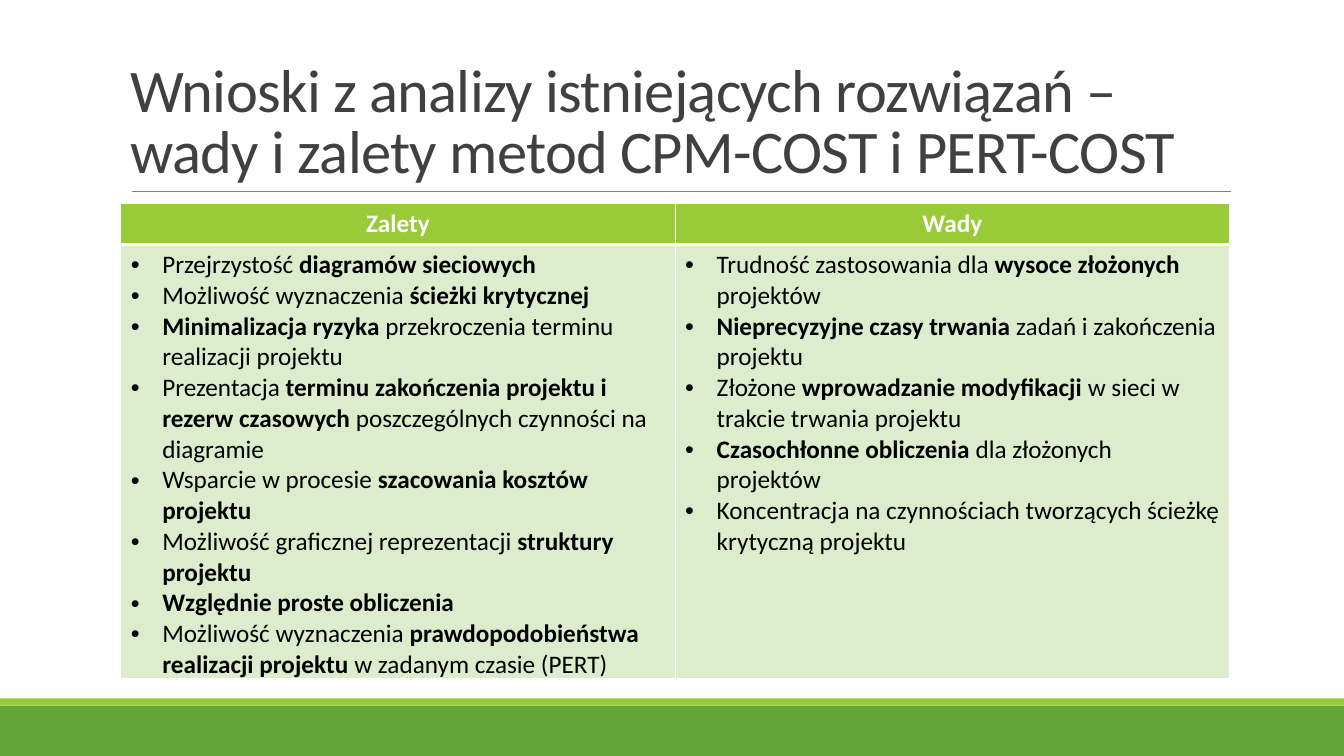
"""Build the slide on the pros and cons of the CPM-COST and PERT-COST methods."""
from lxml.etree import SubElement
from pptx import Presentation
from pptx.dml.color import RGBColor
from pptx.enum.shapes import MSO_CONNECTOR, MSO_SHAPE
from pptx.enum.text import MSO_ANCHOR, PP_ALIGN
from pptx.oxml.ns import qn
from pptx.util import Pt

PX = 9525
WHITE = RGBColor(0xFF, 0xFF, 0xFF)
BLACK = RGBColor(0, 0, 0)
TITLE_GREY = RGBColor(0x40, 0x40, 0x40)
RULE_GREY = RGBColor(0x80, 0x80, 0x80)
GREEN = RGBColor(0x63, 0xA5, 0x37)
LIME = RGBColor(0x99, 0xCB, 0x38)
PALE_GREEN = RGBColor(0xDE, 0xEC, 0xCE)

COLUMNS = {
    "Zalety": [
        "Przejrzystość *diagramów sieciowych*",
        "Możliwość wyznaczenia *ścieżki krytycznej*",
        "*Minimalizacja ryzyka *przekroczenia terminu realizacji projektu",
        "Prezentacja *terminu zakończenia projektu i rezerw czasowych*"
        " poszczególnych czynności na diagramie",
        "Wsparcie w procesie *szacowania kosztów projektu*",
        "Możliwość graficznej reprezentacji *struktury projektu*",
        "*Względnie proste obliczenia*",
        "Możliwość wyznaczenia *prawdopodobieństwa realizacji projektu*"
        " w zadanym czasie (PERT)",
    ],
    "Wady": [
        "Trudność zastosowania dla *wysoce złożonych *projektów",
        "*Nieprecyzyjne czasy trwania *zadań i zakończenia projektu",
        "Złożone *wprowadzanie modyfikacji *w sieci w trakcie trwania projektu",
        "*Czasochłonne obliczenia *dla złożonych projektów",
        "Koncentracja na czynnościach tworzących ścieżkę krytyczną projektu",
    ],
}


def style_run(run, size, color, bold=False):
    run.font.name = "Calibri"
    run.font.size = Pt(size)
    run.font.color.rgb = color
    run.font.bold = bold


def style_cell(cell, fill, borders):
    properties = cell._tc.get_or_add_tcPr()
    for side, points in borders.items():
        border = SubElement(properties, qn(f"a:ln{side}"), w=str(Pt(points)))
        paint = SubElement(border, qn("a:solidFill"))
        SubElement(paint, qn("a:srgbClr"), val=str(WHITE))
    cell.fill.solid()
    cell.fill.fore_color.rgb = fill


deck = Presentation()
deck.slide_width, deck.slide_height = 1280 * PX, 720 * PX
slide = deck.slides.add_slide(deck.slide_layouts[6])

for top, height, color in ((672, 48, GREEN), (665, 7, LIME)):
    band = slide.shapes.add_shape(MSO_SHAPE.RECTANGLE, 0, top * PX, 1280 * PX, height * PX)
    band.shadow.inherit = False
    band.fill.solid()
    band.fill.fore_color.rgb = color
    band.line.fill.background()

title_rule = slide.shapes.add_connector(
    MSO_CONNECTOR.STRAIGHT, 126 * PX, 182 * PX, 1172 * PX, 182 * PX)
title_rule.line.color.rgb = RULE_GREY
title_rule.line.width = Pt(0.5)
SubElement(title_rule._element.spPr, qn("a:effectLst"))

title = slide.shapes.add_textbox(115 * PX, 30 * PX, 1056 * PX, 152 * PX).text_frame
title.word_wrap = True
title.vertical_anchor = MSO_ANCHOR.BOTTOM
title.text = "Wnioski z analizy istniejących rozwiązań – wady i zalety metod CPM-COST i PERT-COST"
heading = title.paragraphs[0]
heading.line_spacing = 0.85
style_run(heading.runs[0], 43.2, TITLE_GREY)
heading.runs[0].font._element.set("spc", "-50")

comparison = slide.shapes.add_table(2, 2, 115 * PX, 194 * PX, 1056 * PX, 452 * PX).table
comparison.rows[0].height = 39 * PX
comparison.rows[1].height = 413 * PX

for column, (label, points) in enumerate(COLUMNS.items()):
    header = comparison.cell(0, column)
    style_cell(header, LIME, {"L": 1, "R": 1, "T": 1, "B": 3})
    header.text_frame.text = label
    header.text_frame.paragraphs[0].alignment = PP_ALIGN.CENTER
    style_run(header.text_frame.paragraphs[0].runs[0], 18, WHITE, True)

    body = comparison.cell(1, column)
    style_cell(body, PALE_GREEN, {"L": 1, "R": 1, "B": 1})
    body.text_frame.text = "\n".join(points)
    for paragraph, point in zip(body.text_frame.paragraphs, points):
        paragraph.clear()
        indent = paragraph._p.get_or_add_pPr()
        indent.set("marL", str(30 * PX))
        indent.set("indent", str(-30 * PX))
        SubElement(indent, qn("a:buFont"), typeface="Arial")
        SubElement(indent, qn("a:buChar"), char="•")
        for part, words in enumerate(point.split("*")):
            if words:
                run = paragraph.add_run()
                run.text = words
                style_run(run, 18, BLACK, part % 2 == 1)

deck.save("out.pptx")
